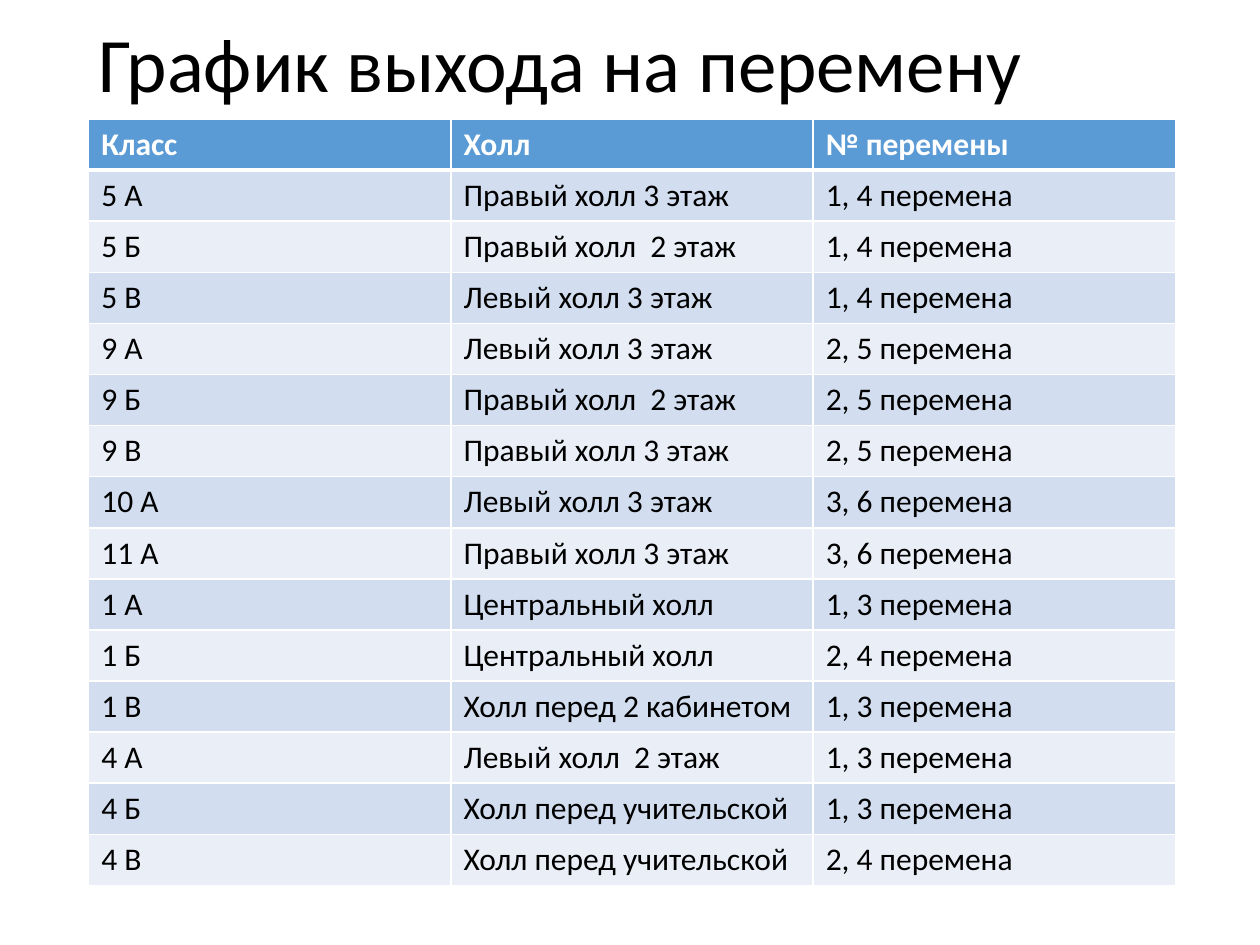
import pptx
import pptx.util
import pptx.dml.color
import pptx.enum.text
import pptx.oxml
import pptx.oxml.ns

Pt = pptx.util.Pt

TITLE = "График выхода на перемену"
HEADER = ("Класс", "Холл", "№ перемены")
SCHEDULE = [
    ("5 А", "Правый холл 3 этаж", "1, 4 перемена"),
    ("5 Б", "Правый холл  2 этаж", "1, 4 перемена"),
    ("5 В", "Левый холл 3 этаж", "1, 4 перемена"),
    ("9 А", "Левый холл 3 этаж", "2, 5 перемена"),
    ("9 Б", "Правый холл  2 этаж", "2, 5 перемена"),
    ("9 В", "Правый холл 3 этаж", "2, 5 перемена"),
    ("10 А", "Левый холл 3 этаж", "3, 6 перемена"),
    ("11 А", "Правый холл 3 этаж", "3, 6 перемена"),
    ("1 А", "Центральный холл", "1, 3 перемена"),
    ("1 Б", "Центральный холл", "2, 4 перемена"),
    ("1 В", "Холл перед 2 кабинетом", "1, 3 перемена"),
    ("4 А", "Левый холл  2 этаж", "1, 3 перемена"),
    ("4 Б", "Холл перед учительской", "1, 3 перемена"),
    ("4 В", "Холл перед учительской", "2, 4 перемена"),
]
FONT = "Calibri"
WHITE, BLACK, BLUE = "FFFFFF", "000000", "5B9BD5"
BANDS = ("EAEFF7", "D2DEEF")
COL_W, ROW_H = 207, 29.2


def rgb(value):
    return pptx.dml.color.RGBColor.from_string(value)


def style(p, size, color, bold=False):
    for r in p.runs:
        r.font.name = FONT
        r.font.size = Pt(size)
        r.font.bold = bold
        r.font.color.rgb = rgb(color)


def set_borders(cell, widths):
    tcPr = cell._tc.get_or_add_tcPr()
    for side, width in zip("LRTB", widths):
        tcPr.append(pptx.oxml.parse_xml(
            f'<a:ln{side} {pptx.oxml.ns.nsdecls("a")} w="{Pt(width)}">'
            f'<a:solidFill><a:srgbClr val="{WHITE}"/></a:solidFill></a:ln{side}>'))


def add_title(s):
    tf = s.shapes.add_textbox(Pt(49.5), Pt(-13.6), Pt(621), Pt(104.4)).text_frame
    tf.word_wrap = True
    tf.vertical_anchor = pptx.enum.text.MSO_ANCHOR.MIDDLE
    p = tf.paragraphs[0]
    p.text = TITLE
    p.line_spacing = 0.9
    style(p, 44, BLACK)


def add_schedule(s):
    rows = [HEADER] + SCHEDULE
    table = s.shapes.add_table(
        len(rows), len(HEADER), Pt(50.7), Pt(68),
        Pt(COL_W * len(HEADER)), Pt(ROW_H * len(rows))).table
    for col in table.columns:
        col.width = Pt(COL_W)
    for i, values in enumerate(rows):
        table.rows[i].height = Pt(ROW_H)
        head = i == 0
        for j, value in enumerate(values):
            cell = table.cell(i, j)
            cell.text = value
            style(cell.text_frame.paragraphs[0], 18, WHITE if head else BLACK, head)
            set_borders(cell, (1, 1, 3 if i == 1 else 1, 3 if head else 1))
            cell.fill.solid()
            cell.fill.fore_color.rgb = rgb(BLUE if head else BANDS[i % 2])


prs = pptx.Presentation()
prs.slide_width, prs.slide_height = Pt(720), Pt(540)
s = prs.slides.add_slide(prs.slide_layouts[6])
add_title(s)
add_schedule(s)
prs.save("out.pptx")
